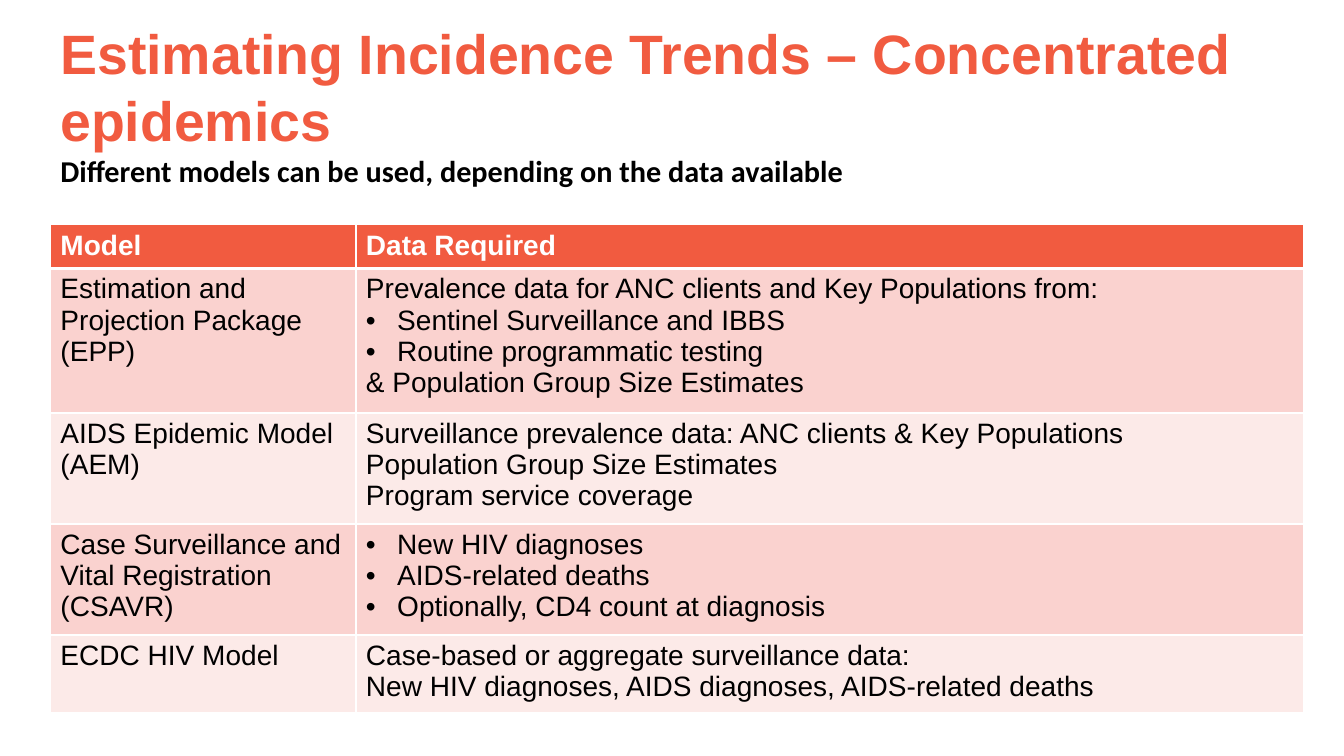
"""Build the slide on models for estimating incidence trends."""
from lxml import etree
from pptx import Presentation
from pptx.dml.color import RGBColor
from pptx.enum.text import MSO_ANCHOR
from pptx.oxml.ns import qn
from pptx.util import Inches, Pt

MIDDLE = MSO_ANCHOR.MIDDLE
BULLET = "•"
ORANGE, BLACK, WHITE = "F15B40", "000000", "FFFFFF"
BANDS = ["FCEAE8", "FAD2CF"]

HEADING = [
    ("Estimating Incidence Trends – Concentrated epidemics", 39.6, "Arial", ORANGE),
    ("Different models can be used, depending on the data available", 21.6, "Calibri", BLACK),
]
MODELS = [
    ("Model", ["Data Required"], 1),
    ("Estimation and Projection Package (EPP)", [
        "Prevalence data for ANC clients and Key Populations from:",
        "•Sentinel Surveillance and IBBS",
        "•Routine programmatic testing",
        "& Population Group Size Estimates"], 4),
    ("AIDS Epidemic Model (AEM)", [
        "Surveillance prevalence data: ANC clients & Key Populations",
        "Population Group Size Estimates",
        "Program service coverage"], 3),
    ("Case Surveillance and Vital Registration (CSAVR)", [
        "•New HIV diagnoses",
        "•AIDS-related deaths",
        "•Optionally, CD4 count at diagnosis"], 3),
    ("ECDC HIV Model", [
        "Case-based or aggregate surveillance data:",
        "New HIV diagnoses, AIDS diagnoses, AIDS-related deaths"], 2),
]
COLUMN_WIDTHS = [3.03, 9.4]
LINE_HEIGHT, CELL_PADDING = 0.31, 0.1


def rgb(color):
    return RGBColor.from_string(color)


def style(paragraph, size, face, color, bold):
    font = paragraph.font
    font.size, font.name, font.bold = Pt(size), face, bold
    font.color.rgb = rgb(color)


def write_lines(frame, lines):
    """Write each (text, size, face, color, bold) line as a paragraph."""
    for index, (text, *look) in enumerate(lines):
        paragraph = frame.add_paragraph() if index else frame.paragraphs[0]
        paragraph.text = text.removeprefix(BULLET)
        if text.startswith(BULLET):
            properties = paragraph._p.get_or_add_pPr()
            properties.set("marL", str(Inches(0.31)))
            properties.set("indent", str(-Inches(0.31)))
            etree.SubElement(properties, qn("a:buFont")).set("typeface", "Arial")
            etree.SubElement(properties, qn("a:buChar")).set("char", BULLET)
        style(paragraph, *look)


def set_borders(cell, bottom_width):
    properties = cell._tc.get_or_add_tcPr()
    widths = [("lnL", 1), ("lnR", 1), ("lnT", 1), ("lnB", bottom_width)]
    for position, (side, width) in enumerate(widths):
        line = etree.Element(qn(f"a:{side}"), w=str(Pt(width)))
        fill = etree.SubElement(line, qn("a:solidFill"))
        etree.SubElement(fill, qn("a:srgbClr")).set("val", WHITE)
        properties.insert(position, line)


def add_heading(slide):
    box = slide.shapes.add_textbox(Inches(0.5), Inches(0.24), Inches(12.83), Inches(1.58))
    frame = box.text_frame
    frame.word_wrap = True
    frame.vertical_anchor = MIDDLE
    write_lines(frame, [(*line, True) for line in HEADING])


def add_models(slide):
    heights = [LINE_HEIGHT * line_count + CELL_PADDING for *_, line_count in MODELS]
    table = slide.shapes.add_table(
        len(MODELS), len(COLUMN_WIDTHS), Inches(0.5), Inches(2.23),
        Inches(sum(COLUMN_WIDTHS)), Inches(sum(heights))).table
    for column, width in zip(table.columns, COLUMN_WIDTHS):
        column.width = Inches(width)
    for row, (model, data, _) in enumerate(MODELS):
        table.rows[row].height = Inches(heights[row])
        header = row == 0
        for column, lines in enumerate([[model], data]):
            cell = table.cell(row, column)
            cell.fill.solid()
            cell.fill.fore_color.rgb = rgb(ORANGE if header else BANDS[row % 2])
            set_borders(cell, 3 if header else 1)
            color = WHITE if header else BLACK
            write_lines(cell.text_frame, [(line, 20, "Arial", color, header) for line in lines])


def main():
    presentation = Presentation()
    presentation.slide_width, presentation.slide_height = Inches(13.33), Inches(7.5)
    slide = presentation.slides.add_slide(presentation.slide_layouts[6])
    add_heading(slide)
    add_models(slide)
    presentation.save("out.pptx")


if __name__ == "__main__":
    main()
